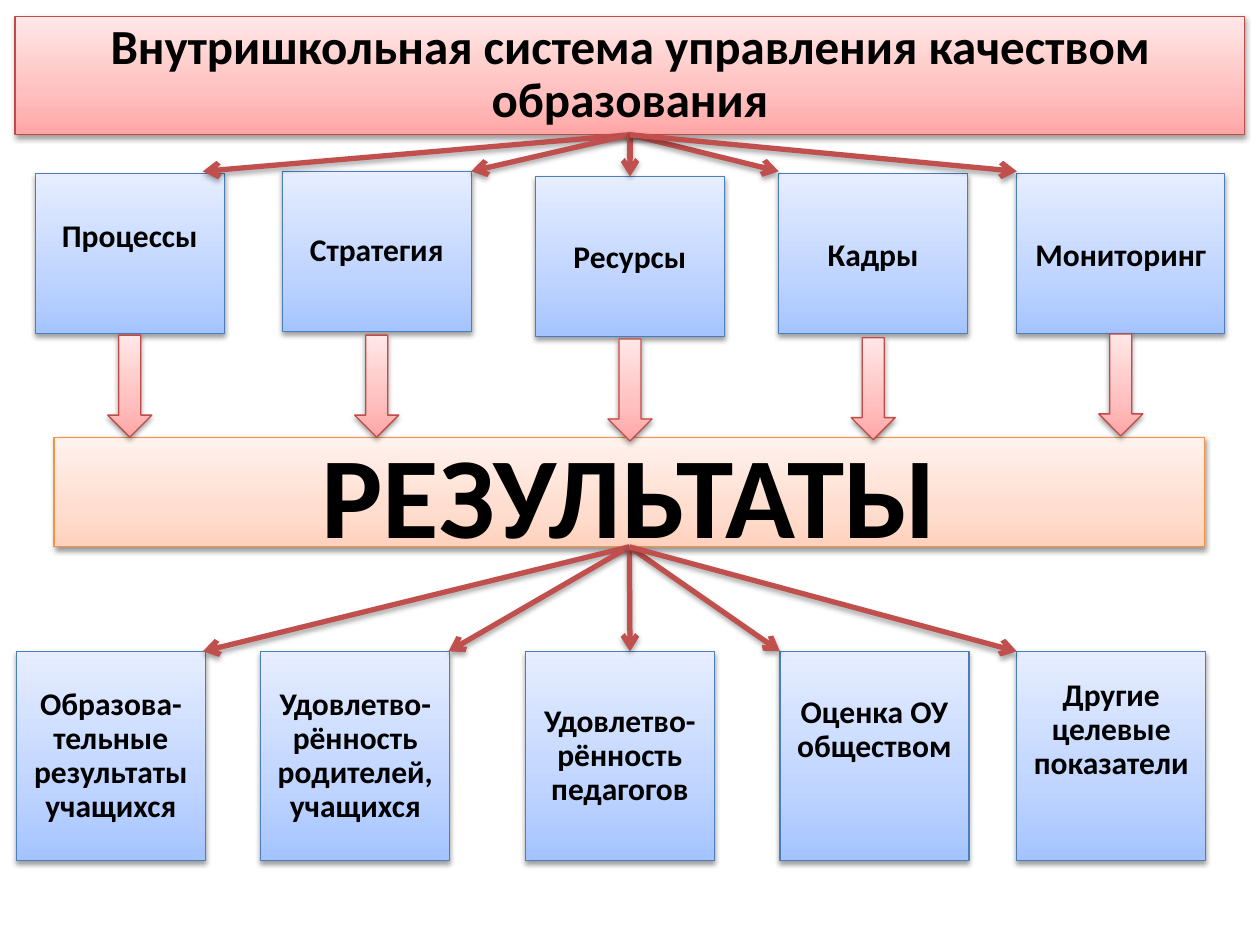
from dataclasses import dataclass

from lxml.etree import SubElement
from pptx import Presentation
from pptx.dml.color import RGBColor
from pptx.enum.shapes import MSO_CONNECTOR, MSO_SHAPE
from pptx.enum.text import MSO_ANCHOR, PP_ALIGN
from pptx.oxml import parse_xml
from pptx.oxml.ns import nsdecls, qn
from pptx.shapes.autoshape import Shape
from pptx.slide import Slide
from pptx.util import Inches, Pt


@dataclass(frozen=True)
class Style:
    bottom: str
    middle: str
    top: str
    line: str


@dataclass(frozen=True)
class Box:
    text: str
    left: float
    top: float
    width: float
    height: float
    size: int = 18
    spacing: float = 1.0
    lift: float = 0.0


@dataclass(frozen=True)
class Aspect:
    box: Box
    arrow_top: float
    target: tuple[float, float]


@dataclass(frozen=True)
class Outcome:
    text: str
    left: float
    target_left: float
    lift: float = 0.0


BLUE = Style("A4C4FF", "BFD4FF", "E6EEFF", "4B7EBC")
ORANGE = Style("FFD2BD", "FFDED0", "FFF2ED", "F69240")
RED = Style("FFA6A5", "FFC0BF", "FFE7E7", "BF4C48")
CONNECTOR_COLOR = "C0504D"
CARD_WIDTH, ASPECT_HEIGHT = 1.5, 1.27
OUTCOME_TOP, OUTCOME_HEIGHT = 5.17, 1.66
ARROW_WIDTH, ARROW_HEIGHT = 0.35, 0.81
TOP, BOTTOM = 0, 2

TITLE = Box("Внутришкольная система управления качеством образования",
            0.12, 0.13, 9.76, 0.94, size=28, spacing=0.9)
RESULTS = Box("РЕЗУЛЬТАТЫ", 0.43, 3.47, 9.13, 0.87, size=66)
ASPECTS = [
    Aspect(Box("Процессы", 0.28, 1.38, CARD_WIDTH, ASPECT_HEIGHT, lift=0.15), 2.66, (1.61, 1.36)),
    Aspect(Box("Стратегия", 2.24, 1.36, CARD_WIDTH, ASPECT_HEIGHT, spacing=0.9), 2.66, (3.74, 1.36)),
    Aspect(Box("Ресурсы", 4.25, 1.4, CARD_WIDTH, ASPECT_HEIGHT), 2.69, (5, 1.4)),
    Aspect(Box("Кадры", 6.18, 1.38, CARD_WIDTH, ASPECT_HEIGHT), 2.68, (6.18, 1.36)),
    Aspect(Box("Мониторинг", 8.07, 1.38, 1.65, ASPECT_HEIGHT), 2.65, (8.07, 1.36)),
]
OUTCOMES = [
    Outcome("Образова-тельные результаты учащихся", 0.13, 1.61),
    Outcome("Удовлетво-рённость родителей, учащихся", 2.07, 3.56),
    Outcome("Удовлетво-рённость педагогов", 4.17, 5),
    Outcome("Оценка ОУ обществом", 6.19, 6.19, lift=0.2),
    Outcome("Другие целевые показатели", 8.07, 8.07, lift=0.2),
]


def color(value: str) -> RGBColor:
    return RGBColor.from_string(value)


def add_shadow(properties, distance: float, opacity: int) -> None:
    properties.append(parse_xml(
        f'<a:effectLst {nsdecls("a")}><a:outerShdw blurRad="{Pt(3.1)}" dist="{Pt(distance)}" '
        f'dir="5400000" rotWithShape="0"><a:srgbClr val="000000">'
        f'<a:alpha val="{opacity * 1000}"/></a:srgbClr></a:outerShdw></a:effectLst>'))


def add_styled_shape(slide: Slide, kind: MSO_SHAPE, left: float, top: float,
                     width: float, height: float, style: Style) -> Shape:
    shape = slide.shapes.add_shape(kind, Inches(left), Inches(top), Inches(width), Inches(height))
    shape.line.color.rgb = color(style.line)
    shape.line.width = Pt(0.75)
    stops = "".join(
        f'<a:gs pos="{position * 1000}"><a:srgbClr val="{value}"/></a:gs>'
        for position, value in ((0, style.bottom), (35, style.middle), (100, style.top)))
    gradient = parse_xml(f'<a:gradFill {nsdecls("a")} rotWithShape="1"><a:gsLst>{stops}</a:gsLst>'
                         '<a:lin ang="16200000" scaled="1"/></a:gradFill>')
    properties = shape.element.spPr
    properties.find(qn("a:prstGeom")).addnext(gradient)
    add_shadow(properties, 1.6, 38)
    return shape


def add_box(slide: Slide, box: Box, style: Style) -> Shape:
    shape = add_styled_shape(slide, MSO_SHAPE.RECTANGLE, box.left, box.top,
                             box.width, box.height, style)
    frame = shape.text_frame
    frame.word_wrap = True
    frame.vertical_anchor = MSO_ANCHOR.MIDDLE
    frame.margin_bottom = Inches(0.05 + 2 * box.lift)
    paragraph = frame.paragraphs[0]
    paragraph.alignment = PP_ALIGN.CENTER
    paragraph.line_spacing = box.spacing
    run = paragraph.add_run()
    run.text = box.text
    run.font.name = "Calibri"
    run.font.size = Pt(box.size)
    run.font.bold = True
    run.font.color.rgb = color("000000")
    return shape


def add_down_arrow(slide: Slide, aspect: Aspect) -> None:
    left = aspect.box.left + (aspect.box.width - ARROW_WIDTH) / 2
    add_styled_shape(slide, MSO_SHAPE.DOWN_ARROW, left, aspect.arrow_top,
                     ARROW_WIDTH, ARROW_HEIGHT, RED)


def add_branch(slide: Slide, source: Shape, target: tuple[float, float], card: Shape) -> None:
    end_left, end_top = Inches(target[0]), Inches(target[1])
    connector = slide.shapes.add_connector(
        MSO_CONNECTOR.STRAIGHT, source.left + source.width // 2,
        source.top + source.height, end_left, end_top)
    connector.begin_connect(source, BOTTOM)
    card_middle = card.left + card.width // 2
    if abs(card_middle - end_left) < Inches(0.02) and card.top == end_top:
        connector.end_connect(card, TOP)
    connector.line.color.rgb = color(CONNECTOR_COLOR)
    connector.line.width = Pt(3)
    SubElement(connector.line._get_or_add_ln(), qn("a:tailEnd"), type="arrow")
    add_shadow(connector.element.spPr, 1.8, 35)


def main() -> None:
    presentation = Presentation()
    presentation.slide_width, presentation.slide_height = Inches(10), Inches(7.5)
    slide = presentation.slides.add_slide(presentation.slide_layouts[6])

    aspect_cards = [add_box(slide, aspect.box, BLUE) for aspect in ASPECTS]
    results = add_box(slide, RESULTS, ORANGE)
    for aspect in ASPECTS:
        add_down_arrow(slide, aspect)
    title = add_box(slide, TITLE, RED)
    for aspect, card in zip(ASPECTS, aspect_cards):
        add_branch(slide, title, aspect.target, card)

    outcome_cards = [
        add_box(slide, Box(outcome.text, outcome.left, OUTCOME_TOP, CARD_WIDTH, OUTCOME_HEIGHT,
                           spacing=0.9, lift=outcome.lift), BLUE)
        for outcome in OUTCOMES]
    for outcome, card in zip(OUTCOMES, outcome_cards):
        add_branch(slide, results, (outcome.target_left, OUTCOME_TOP), card)

    presentation.save("out.pptx")


if __name__ == "__main__":
    main()
